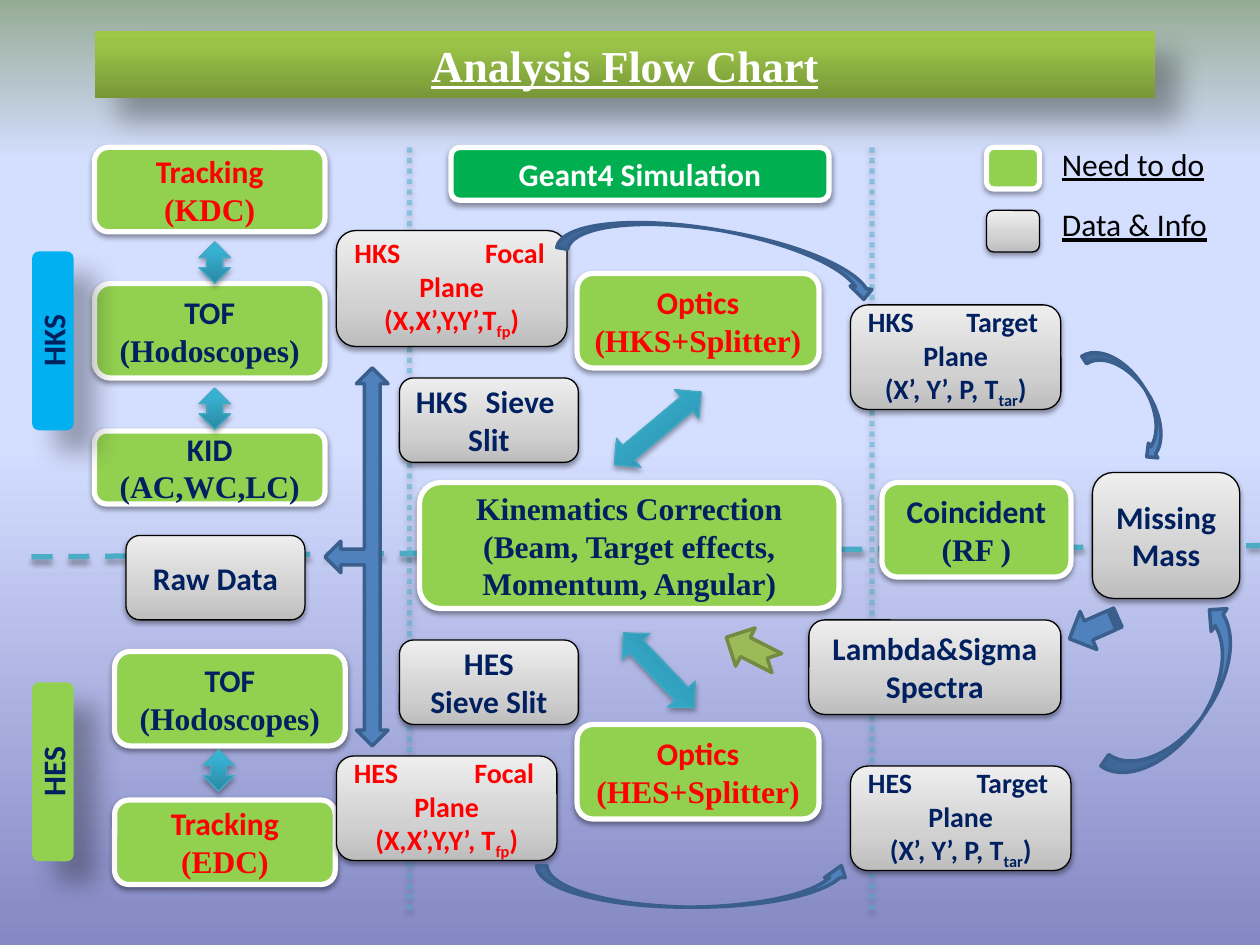
from lxml import etree
from pptx import Presentation
from pptx import util as u
from pptx.dml.color import RGBColor
from pptx.enum import dml, shapes, text
from pptx.oxml import ns

Form = shapes.MSO_SHAPE
Align = text.PP_ALIGN

LIME = RGBColor(0x92, 0xD0, 0x50)
GREEN = RGBColor(0x00, 0xB0, 0x50)
SKY = RGBColor(0x00, 0xB0, 0xF0)
TEAL = RGBColor(0x4B, 0xAC, 0xC6)
CYAN = RGBColor(0x46, 0xAA, 0xC5)
BLUE = RGBColor(0x4F, 0x81, 0xBD)
STEEL = RGBColor(0x3A, 0x5F, 0x8C)
OLIVE = RGBColor(0x9B, 0xBB, 0x59)
MOSS = RGBColor(0x73, 0x8A, 0x42)
NAVY = RGBColor(0x00, 0x20, 0x60)
RED = RGBColor(0xFF, 0x00, 0x00)
WHITE = RGBColor(0xFF, 0xFF, 0xFF)
BLACK = RGBColor(0x00, 0x00, 0x00)

SANS = "Calibri"
SERIF = "Times New Roman"

BACK = ((0, "8488C4"), (53, "D4DEFF"), (83, "D4DEFF"), (100, "96AB94"))
LEAF = ((0, "779737"), (80, "9BC348"), (100, "9DC746"))
GRAY = ((0, "BDBDBD"), (35, "D1D1D1"), (100, "EEEEEE"))
AQUA = ((0, "2A88A2"), (80, "37B1D2"), (100, "34B4D6"))

SOFT = (38, 3.1, 1.6, 90)
THIN = (35, 3.1, 1.8, 90)
DEEP = (30, 15, 18, 45)


def node(root, tag, **attrs):
    return etree.SubElement(root, ns.qn(tag), {k: str(v) for k, v in attrs.items()})


def blend(fill, root, stops):
    fill.gradient()
    fill.gradient_angle = 90
    scale = next(root.iter(ns.qn("a:gsLst")))
    for old in list(scale):
        scale.remove(old)
    for place, tint in stops:
        stop = node(scale, "a:gs", pos=place * 1000)
        node(stop, "a:srgbClr", val=tint)


def shade(effects, look):
    alpha, blur, gap, angle = look
    outer = node(effects, "a:outerShdw", blurRad=u.Pt(blur), dist=u.Pt(gap),
                 dir=angle * 60000, algn="ctr", rotWithShape=0)
    tint = node(outer, "a:srgbClr", val="000000")
    node(tint, "a:alpha", val=alpha * 1000)


class Chart:
    def __init__(self, deck):
        self.slide = deck.slides.add_slide(deck.slide_layouts[6])
        blend(self.slide.background.fill, self.slide._element, BACK)

    def guide(self, start, end, dash, alpha=100):
        line = self.slide.shapes.add_connector(
            shapes.MSO_CONNECTOR.STRAIGHT, *map(u.Inches, start + end))
        line.line.color.rgb = TEAL
        line.line.width = u.Pt(3)
        line.line.dash_style = dash
        root = line._element.spPr
        tint = next(root.iter(ns.qn("a:srgbClr")))
        node(tint, "a:alpha", val=alpha * 1000)
        shade(node(root, "a:effectLst"), THIN)

    def shape(self, form, at, fill, edge=None, width=0.75, look=None, turn=0):
        item = self.slide.shapes.add_shape(form, *map(u.Inches, at))
        item.rotation = turn
        item.shadow.inherit = False
        root = item._element.spPr
        if isinstance(fill, RGBColor):
            item.fill.solid()
            item.fill.fore_color.rgb = fill
        else:
            blend(item.fill, root, fill)
        if edge is None:
            item.line.fill.background()
        else:
            item.line.color.rgb = edge
            item.line.width = u.Pt(width)
        if look:
            shade(root.find(ns.qn("a:effectLst")), look)
        return item

    def words(self, item, copy, color, fonts=(SANS,), size=18, bold=True, under=False, align=Align.CENTER):
        frame = item.text_frame
        frame.word_wrap = True
        frame.text = copy
        for row, para in enumerate(frame.paragraphs):
            para.alignment = align
            if "\t" in para.text:
                para.alignment = Align.LEFT
                stops = node(para._p.get_or_add_pPr(), "a:tabLst")
                node(stops, "a:tab", pos=item.width - u.Inches(0.32), algn="r")
            parts = para.text.split("|")
            para.text = parts[0]
            for part in parts[1:]:
                para.add_run().text = part
            for spot, run in enumerate(para.runs):
                font = run.font
                font.name = fonts[min(row, len(fonts) - 1)]
                font.size = u.Pt(size)
                font.bold = bold
                font.underline = under
                font.color.rgb = color
                if spot % 2:
                    font._element.set("baseline", "-25000")

    def label(self, item, copy, color, **style):
        item.text_frame.vertical_anchor = text.MSO_ANCHOR.MIDDLE
        self.words(item, copy, color, **style)

    def title(self, at, copy):
        item = self.shape(Form.RECTANGLE, at, LEAF, look=DEEP)
        self.label(item, copy, WHITE, fonts=(SERIF,), size=25.2, under=True)

    def task(self, at, copy="", color=NAVY, fonts=(SANS, SERIF), fill=LIME):
        item = self.shape(Form.ROUNDED_RECTANGLE, at, fill, WHITE, 3, SOFT)
        self.label(item, copy, color, fonts=fonts)

    def data(self, at, copy="", color=NAVY, size=18):
        item = self.shape(Form.ROUNDED_RECTANGLE, at, GRAY, BLACK, look=SOFT)
        self.label(item, copy, color, size=size)

    def side(self, top, copy, fill):
        item = self.shape(Form.ROUNDED_RECTANGLE, (-0.29, top, 1.42, 0.33), fill, look=DEEP, turn=270)
        self.label(item, copy, NAVY)

    def link(self, form, at, turn=0):
        self.shape(form, at, AQUA, CYAN, look=THIN, turn=turn)

    def arrow(self, form, at, turn=0, fill=BLUE, edge=STEEL):
        return self.shape(form, at, fill, edge, 2, turn=turn)

    def note(self, at, copy):
        item = self.slide.shapes.add_textbox(*map(u.Inches, at))
        self.words(item, copy, BLACK, bold=False, under=True, align=Align.LEFT)


def main():
    deck = Presentation()
    deck.slide_width, deck.slide_height = u.Inches(10), u.Inches(7.5)
    flow = Chart(deck)
    for x in (6.92, 3.25):
        flow.guide((x, 1.17), (x, 7.25), dml.MSO_LINE.ROUND_DOT, 51)
    flow.guide((0.25, 4.42), (10, 4.33), dml.MSO_LINE.DASH)
    flow.title((0.75, 0.25, 8.42, 0.53), "Analysis Flow Chart")

    flow.task((0.75, 1.17, 1.83, 0.67), "Tracking\n(KDC)", RED)
    flow.task((0.75, 2.25, 1.83, 0.75), "TOF\n(Hodoscopes)")
    flow.task((0.75, 3.42, 1.83, 0.58), "KID\n(AC,WC,LC)")
    flow.data((2.67, 1.83, 1.83, 0.92), "HKS\tFocal\nPlane\n(X,X’,Y,Y’,T|fp|)", RED, 16)
    flow.side(2.54, "HKS", SKY)
    flow.task((4.58, 2.17, 1.92, 0.75), "Optics\n(HKS+Splitter)", RED)
    flow.data((6.75, 2.42, 1.67, 0.83), "HKS\tTarget\nPlane\n(X’, Y’, P, T|tar|)", size=16)
    flow.arrow(Form.CURVED_DOWN_ARROW, (4.43, 1.83, 2.56, 0.35), 9.6)

    flow.task((0.91, 6.35, 1.75, 0.67), "Tracking\n(EDC)", RED)
    flow.task((0.91, 5.17, 1.83, 0.75), "TOF\n(Hodoscopes)")
    flow.data((2.67, 6, 1.75, 0.83), "HES\tFocal\nPlane\n(X,X’,Y,Y’, T|fp|)", RED, 16)
    flow.side(5.96, "HES", LIME)
    flow.task((4.58, 5.75, 1.92, 0.75), "Optics\n(HES+Splitter)", RED)
    flow.data((6.75, 6.08, 1.75, 0.83), "HES\tTarget\nPlane\n(X’, Y’, P, T|tar|)", size=16)

    flow.task((7, 3.83, 1.5, 0.75), "Coincident\n(RF )")
    flow.task((3.33, 3.83, 3.33, 1),
              "Kinematics Correction\n(Beam, Target effects, Momentum, Angular)", fonts=(SERIF,))
    flow.link(Form.LEFT_RIGHT_ARROW, (4.77, 3.25, 0.9, 0.3), 320.1)
    flow.link(Form.LEFT_RIGHT_ARROW, (4.82, 5.17, 0.82, 0.3), 226.4)
    for x, y in ((1.58, 1.92), (1.58, 3.08), (1.61, 5.95)):
        flow.link(Form.UP_DOWN_ARROW, (x, y, 0.25, 0.33))

    flow.data((8.67, 3.75, 1.17, 1), "Missing Mass")
    curve = flow.arrow(Form.CURVED_UP_ARROW, (4.26, 6.87, 2.5, 0.33))
    curve.adjustments[2] = 0.29
    flow.data((1, 4.25, 1.42, 0.67), "Raw Data")
    flow.arrow(Form.CURVED_DOWN_ARROW, (8.47, 3.04, 1.02, 0.28), 57.1)
    flow.arrow(Form.CURVED_UP_ARROW, (8.57, 5.32, 1.62, 0.44), 304.8)
    flow.arrow(Form.LEFT_RIGHT_UP_ARROW, (1.33, 4.17, 3, 0.5), 270)

    flow.data((7.83, 1.67, 0.42, 0.33))
    flow.task((7.83, 1.17, 0.42, 0.33))
    flow.note((8.33, 1.1, 1.5, 0.4), "Need to do")
    flow.note((8.33, 1.58, 1.5, 0.4), "Data & Info")

    flow.data((6.42, 4.92, 2, 0.75), "Lambda&Sigma\nSpectra")
    flow.arrow(Form.STRIPED_RIGHT_ARROW, (8.47, 4.82, 0.42, 0.33), 156.2)
    flow.arrow(Form.NOTCHED_RIGHT_ARROW, (5.74, 4.99, 0.45, 0.34), 207, OLIVE, MOSS)
    flow.task((3.58, 1.17, 3, 0.42), "Geant4 Simulation", WHITE, fill=GREEN)
    flow.data((3.17, 3, 1.42, 0.67), "HKS\tSieve\nSlit")
    flow.data((3.17, 5.08, 1.42, 0.67), "HES\nSieve Slit")
    deck.save("out.pptx")


if __name__ == "__main__":
    main()
